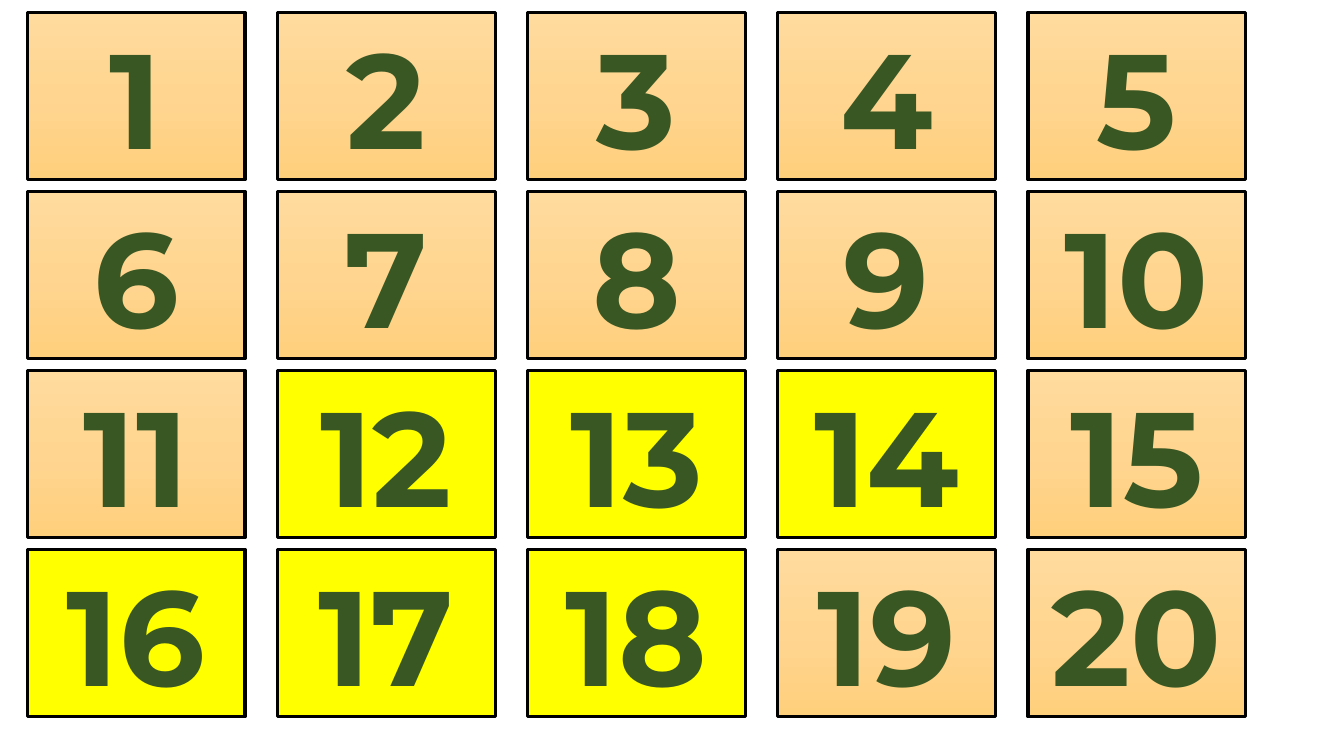
from copy import deepcopy

from pptx import Presentation
from pptx.dml.color import RGBColor
from pptx.enum.shapes import MSO_SHAPE
from pptx.enum.text import MSO_ANCHOR, PP_ALIGN
from pptx.oxml.ns import qn
from pptx.util import Pt

# Content: numbers row by row, and the ones marked yellow
NUMBERS = range(1, 21)
MARKED = {12, 13, 14, 16, 17, 18}

# Colours
BLACK = RGBColor(0x00, 0x00, 0x00)
GREEN = RGBColor(0x38, 0x57, 0x23)
YELLOW = RGBColor(0xFF, 0xFF, 0x00)
ORANGES = [
    (0, RGBColor(0xFF, 0xDB, 0x9E)),
    (0.5, RGBColor(0xFF, 0xD5, 0x90)),
    (1, RGBColor(0xFF, 0xD0, 0x7C)),
]

# Grid, in points
COLUMNS = 5
LEFT, TOP = 19.5, 8.8
WIDTH, HEIGHT = 155.5, 119.5
STEP_X, STEP_Y = 178.7, 127.9

NUMBER_FONT = {"name": "Montserrat", "size": Pt(96), "bold": True}


def fill_orange(box):
    """Fill a box with the orange gradient, running from top to bottom."""
    fill = box.fill
    fill.gradient()
    fill.gradient_angle = 270
    # The default gradient has two stops; add the middle one
    stop_list = box.element.spPr.find(qn("a:gradFill")).find(qn("a:gsLst"))
    stop_list.insert(1, deepcopy(stop_list[0]))
    for stop, (position, color) in zip(fill.gradient_stops, ORANGES):
        stop.position = position
        stop.color.rgb = color


def add_number(page, number):
    """Add one bordered box at the number's place in the grid."""
    row, column = divmod(number - 1, COLUMNS)
    box = page.shapes.add_shape(
        MSO_SHAPE.RECTANGLE,
        Pt(LEFT + column * STEP_X), Pt(TOP + row * STEP_Y),
        Pt(WIDTH), Pt(HEIGHT),
    )
    box.shadow.inherit = False
    box.line.color.rgb = BLACK
    box.line.width = Pt(2.25)
    if number in MARKED:
        box.fill.solid()
        box.fill.fore_color.rgb = YELLOW
    else:
        fill_orange(box)

    # Number
    box.text_frame.vertical_anchor = MSO_ANCHOR.MIDDLE
    para = box.text_frame.paragraphs[0]
    para.alignment = PP_ALIGN.CENTER
    span = para.add_run()
    span.text = str(number)
    for name, value in NUMBER_FONT.items():
        setattr(span.font, name, value)
    span.font.color.rgb = GREEN


def main():
    deck = Presentation()
    deck.slide_width, deck.slide_height = Pt(960), Pt(540)
    page = deck.slides.add_slide(deck.slide_layouts.get_by_name("Blank"))
    for number in NUMBERS:
        add_number(page, number)
    deck.save("out.pptx")


if __name__ == "__main__":
    main()
